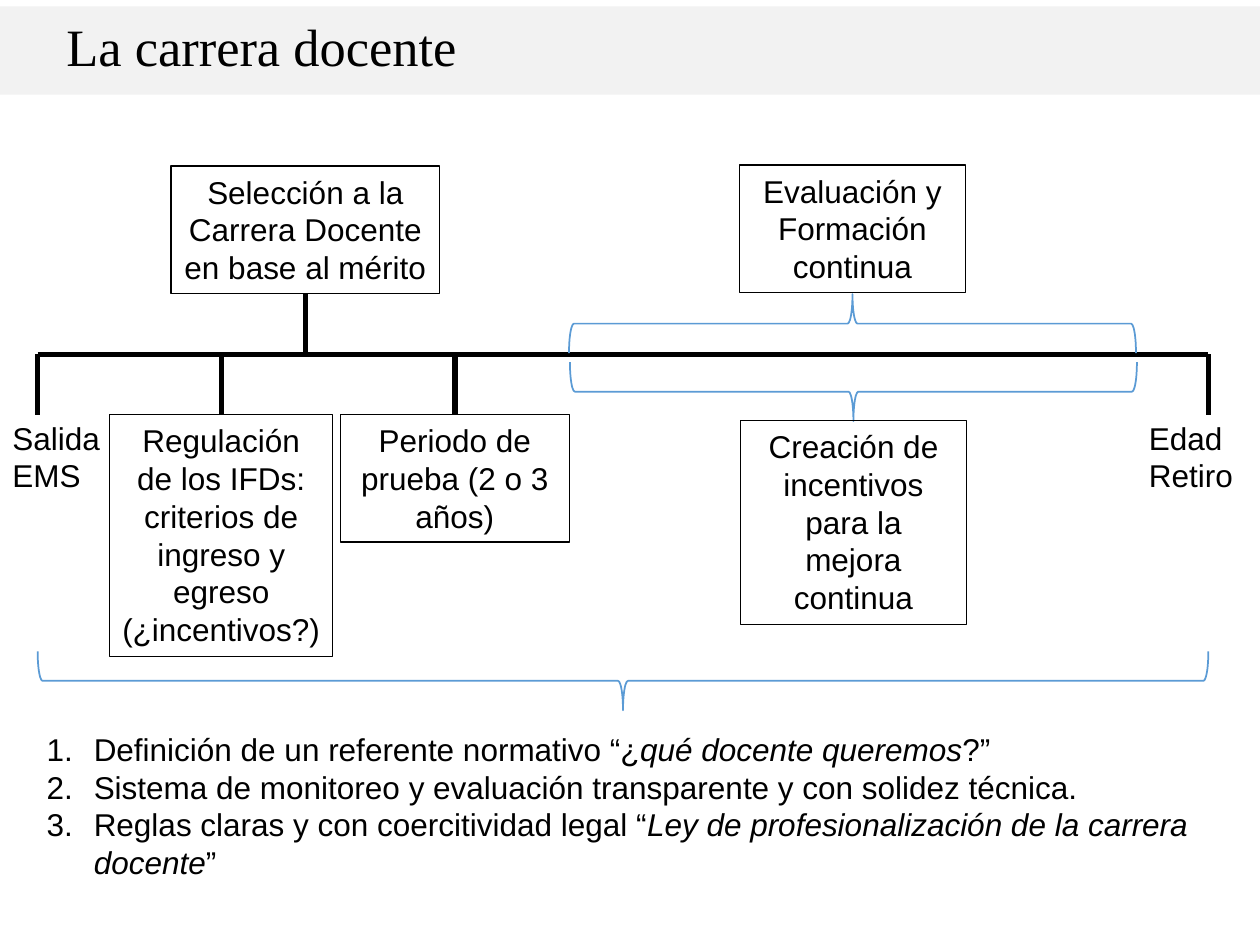
from dataclasses import dataclass

from lxml import etree
from pptx import Presentation
from pptx.dml.color import RGBColor
from pptx.enum.shapes import MSO_CONNECTOR, MSO_SHAPE
from pptx.enum.text import MSO_ANCHOR, MSO_AUTO_SIZE, PP_ALIGN
from pptx.oxml.ns import qn
from pptx.util import Cm, Pt

LINE = MSO_CONNECTOR.STRAIGHT
RECT, BRACE = MSO_SHAPE.RECTANGLE, MSO_SHAPE.LEFT_BRACE
LEFT, MID = PP_ALIGN.LEFT, PP_ALIGN.CENTER
TOP, GROW = MSO_ANCHOR.TOP, MSO_AUTO_SIZE.SHAPE_TO_FIT_TEXT


@dataclass(frozen=True)
class Theme:
    ink: RGBColor = RGBColor(0, 0, 0)
    band: RGBColor = RGBColor(0xF2, 0xF2, 0xF2)
    brace: RGBColor = RGBColor(0x5B, 0x9B, 0xD5)
    head: str = "Times New Roman"
    body: str = "Arial"
    big: float = 30
    text: float = 18
    thin: float = 0.75
    curve: float = 1
    axis: float = 2.75
    drop: float = 3


THEME = Theme()
FRAME = {"word_wrap": True, "auto_size": GROW, "vertical_anchor": TOP,
         "margin_left": Cm(0.25), "margin_right": Cm(0.25),
         "margin_top": Cm(0.13), "margin_bottom": Cm(0.13)}
PARA = {"space_before": Pt(0), "space_after": Pt(0), "line_spacing": 1.0}


def apply(item, vals):
    for key, val in vals.items():
        setattr(item, key, val)


def place(shape, box):
    apply(shape, dict(zip(("left", "top", "width", "height"), map(Cm, box))))


def write(shape, lines, align=LEFT, face=THEME.body, size=THEME.text):
    """Fill a shape; each line is a list of (text, italic) runs or a string."""
    frame = shape.text_frame
    apply(frame, FRAME)
    for i, line in enumerate(lines):
        para = frame.paragraphs[0] if i == 0 else frame.add_paragraph()
        apply(para, {**PARA, "alignment": align})
        for text, slant in [(line, False)] if isinstance(line, str) else line:
            run = para.add_run()
            run.text = text
            apply(run.font, {"name": face, "size": Pt(size), "italic": slant})
            run.font.color.rgb = THEME.ink


def add_box(slide, box, lines):
    shape = slide.shapes.add_shape(RECT, *map(Cm, box))
    shape.shadow.inherit = False
    shape.fill.background()
    shape.line.color.rgb = THEME.ink
    shape.line.width = Pt(THEME.thin)
    write(shape, lines, MID)
    return shape


def add_line(slide, start, end, width):
    line = slide.shapes.add_connector(LINE, *map(Cm, start + end))
    line.line.color.rgb = THEME.ink
    line.line.width = Pt(width)
    etree.SubElement(line._element.spPr, qn("a:effectLst"))
    return line


def add_brace(slide, box, turn):
    """Lay a brace flat in the box: turn 90 points up, 270 points down."""
    x, y, w, h = box
    flat = (x + (w - h) / 2, y + (h - w) / 2, h, w)
    shape = slide.shapes.add_shape(BRACE, *map(Cm, flat))
    shape.rotation = turn
    shape.shadow.inherit = False
    shape.fill.background()
    shape.line.color.rgb = THEME.brace
    shape.line.width = Pt(THEME.curve)


def add_head(slide, box):
    x, y, w, h = box
    band = slide.shapes.add_shape(RECT, *map(Cm, box))
    band.shadow.inherit = False
    band.fill.solid()
    band.fill.fore_color.rgb = THEME.band
    band.line.fill.background()
    slide.shapes._spTree.insert(2, band._element)  # behind the title
    title = slide.shapes.title
    place(title, (x + 1.09, y + 0.02, 19, 1.55))
    write(title, ["La carrera docente"], LEFT, THEME.head, THEME.big)


def add_path(slide, box):
    """Career time line: axis, stages hung from it, and braces."""
    x, y, w, h = box
    axis, low = y + 3.81, y + 5.03
    add_line(slide, (x, axis), (x + w, axis), THEME.axis)

    # Ends of the career
    for at, left, lines in ((x, x - 0.76, ["Salida EMS"]),
                            (x + w, x + 22.15, ["Edad", "Retiro"])):
        add_line(slide, (at, axis), (at, low), THEME.drop)
        note = slide.shapes.add_textbox(*map(Cm, (left, low - 0.05, 2.51, 1.8)))
        write(note, lines)

    # Stages joined to the axis: box, text, side that meets the line
    stages = (
        ((x + 1.45, low, 4.5, 4.88),
         ["Regulación de los IFDs: criterios de ingreso y egreso",
          "(¿incentivos?)"], 0),
        ((x + 6.1, low, 4.62, 2.57), ["Periodo de prueba (2 o 3 años)"], 0),
        ((x + 2.69, y + 0.02, 5.41, 2.57),
         ["Selección a la Carrera Docente en base al mérito"], 2),
    )
    for area, lines, side in stages:
        shape = add_box(slide, area, lines)
        mid = area[0] + area[2] / 2
        line = add_line(slide, (mid, axis), (mid, low), THEME.drop)
        line.end_connect(shape, side)

    # Ongoing stages and the braces that span them
    add_brace(slide, (x + 10.71, y + 2.6, 11.43, 1.19), 90)
    add_brace(slide, (x + 10.73, y + 3.97, 11.43, 1.19), 270)
    add_box(slide, (x + 14.15, y, 4.55, 2.57),
            ["Evaluación y Formación continua"])
    add_box(slide, (x + 14.17, y + 5.15, 4.55, 4.11),
            ["Creación de incentivos para la mejora continua"])
    add_brace(slide, (x, y + h - 1.19, w, 1.19), 270)


def add_list(slide, box):
    body = slide.placeholders[1]
    place(body, box)
    write(body, [
        [("Definición de un referente normativo “¿", False),
         ("qué docente queremos", True), ("?”", False)],
        "Sistema de monitoreo y evaluación transparente y con solidez técnica.",
        [("Reglas claras y con coercitividad legal “", False),
         ("Ley de profesionalización de la carrera docente", True),
         ("”", False)],
    ])
    for para in body.text_frame.paragraphs:
        props = para._p.get_or_add_pPr()
        props.set("marL", str(Cm(0.95)))
        props.set("indent", str(-Cm(0.95)))
        etree.SubElement(props, qn("a:buAutoNum"), type="arabicPeriod")


def main():
    deck = Presentation()
    deck.slide_width, deck.slide_height = Cm(25.4), Cm(19.05)
    slide = deck.slides.add_slide(deck.slide_layouts[1])
    add_head(slide, (0, 0.13, 25.4, 1.78))
    add_path(slide, (0.76, 3.33, 23.6, 10.99))
    add_list(slide, (0.69, 14.58, 23.7, 3.33))
    deck.save("out.pptx")


if __name__ == "__main__":
    main()
